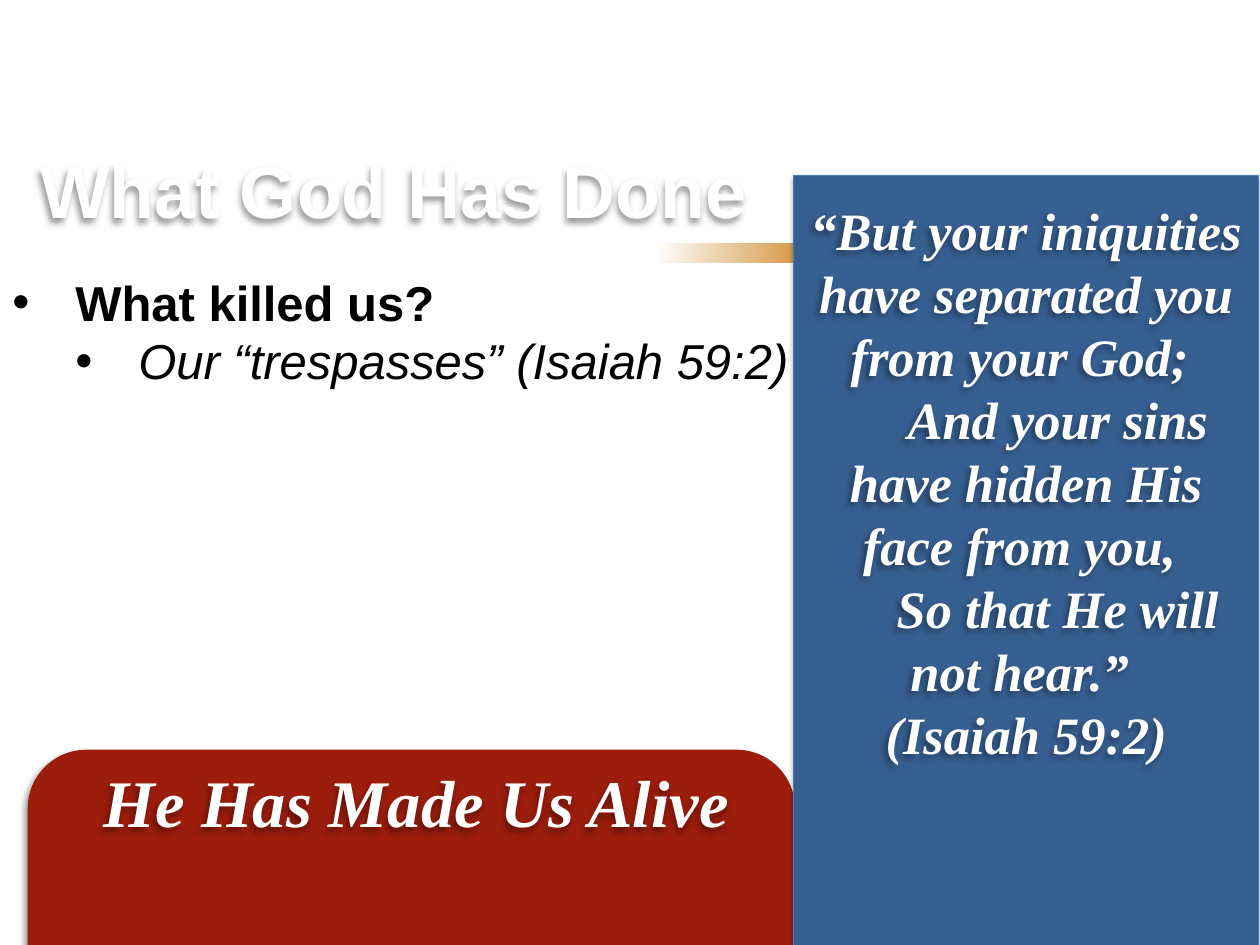
from dataclasses import dataclass
from typing import Optional

from lxml.etree import SubElement
from pptx import Presentation
from pptx.dml.color import RGBColor
from pptx.enum.shapes import MSO_SHAPE as Form
from pptx.enum.text import MSO_AUTO_SIZE as Fit, PP_ALIGN as Align
from pptx.oxml.ns import qn
from pptx.util import Inches, Pt

COLS, ROWS = 100, 75
UNIT = Inches(0.1)
WHITE, BLACK = "FFFFFF", "000000"
SANS, SERIF = "Arial", "Times New Roman"


@dataclass(frozen=True)
class Area:
    """A place on the grid, in columns and rows."""
    col: float
    row: float
    wide: float
    high: float

    def frame(self) -> list[int]:
        """Give left, top, width and height."""
        return [round(n * UNIT) for n in (self.col, self.row, self.wide, self.high)]


@dataclass(frozen=True)
class Shade:
    """A soft shadow."""
    alpha: int
    blur: float
    dist: float
    angle: int


@dataclass(frozen=True)
class Line:
    """A paragraph with its style."""
    text: str
    size: int
    font: str = SERIF
    color: str = WHITE
    bold: bool = True
    italic: bool = True
    align: Optional[Align] = Align.CENTER
    level: Optional[int] = None


LEFT = Shade(40, 4, 3, 135)
DOWN = Shade(35, 3.1, 1.8, 90)


def paint(code: str) -> RGBColor:
    """Turn a hex string into a colour."""
    return RGBColor.from_string(code)


def cast(shape, shade: Optional[Shade]) -> None:
    """Replace the default shadow by the given one."""
    shape.shadow.inherit = False
    if shade:
        glow = SubElement(shape._element.spPr.find(qn("a:effectLst")), qn("a:outerShdw"),
                          blurRad=str(Pt(shade.blur)), dist=str(Pt(shade.dist)),
                          dir=str(shade.angle * 60000), algn="ctr", rotWithShape="0")
        tint = SubElement(glow, qn("a:srgbClr"), val=BLACK)
        SubElement(tint, qn("a:alpha"), val=str(shade.alpha * 1000))


def block(host, form: Form, area: Area, fill: str, shade: Shade, edge: str = ""):
    """Draw a filled shape."""
    shape = host.add_shape(form, *area.frame())
    shape.fill.solid()
    shape.fill.fore_color.rgb = paint(fill)
    if edge:
        shape.line.color.rgb = paint(edge)
        shape.line.width = Pt(0.75)
    else:
        shape.line.fill.background()
    cast(shape, shade)


def fade(host, area: Area) -> None:
    """Draw the bar that fades in from the left."""
    bar = host.add_shape(Form.RECTANGLE, *area.frame())
    bar.fill.gradient()
    bar.fill.gradient_angle = 356
    for stop, (spot, code) in zip(bar.fill.gradient_stops, ((0.8, WHITE), (1, "CF8A2B"))):
        stop.position = spot
        stop.color.rgb = paint(code)
    bar.line.fill.background()
    cast(bar, None)


def bullet(para, level: int) -> None:
    """Give a paragraph a hanging bullet."""
    para.level = level
    props = para._p.get_or_add_pPr()
    props.set("marL", str(Inches(0.5 * (level + 1))))
    props.set("indent", str(Inches(-0.5)))
    SubElement(props, qn("a:buFont"), typeface=SANS)
    SubElement(props, qn("a:buChar"), char="•")


def write(host, area: Area, lines: list[Line], shade: Optional[Shade] = None,
          wrap: bool = True) -> None:
    """Write paragraphs in a text box."""
    box = host.add_textbox(*area.frame())
    frame = box.text_frame
    frame.word_wrap = wrap
    frame.auto_size = Fit.SHAPE_TO_FIT_TEXT
    for i, line in enumerate(lines):
        para = frame.add_paragraph() if i else frame.paragraphs[0]
        para.text = line.text
        para.alignment = line.align
        if line.level is not None:
            bullet(para, line.level)
        for run in para.runs:
            font = run.font
            font.name, font.size = line.font, Pt(line.size)
            font.bold, font.italic = line.bold, line.italic
            font.color.rgb = paint(line.color)
    cast(box, shade)


def main() -> None:
    """Build the slide."""
    deck = Presentation()
    deck.slide_width, deck.slide_height = COLS * UNIT, ROWS * UNIT
    slide = deck.slides.add_slide(deck.slide_layouts[6])
    host = slide.shapes

    title = Line("What God Has Done", 42, SANS, italic=False, align=None)
    write(host, Area(2.2, 11, 58.6, 8.1), [title], LEFT, wrap=False)
    fade(host, Area(0, 19.3, 65, 1.5))

    theme = host.add_group_shape().shapes
    block(theme, Form.ROUNDED_RECTANGLE, Area(2.2, 59.5, 60.9, 27.9), "9D1D0C", LEFT)
    write(theme, Area(5.3, 59.9, 55.5, 7.4), [Line("He Has Made Us Alive", 38)], LEFT)

    write(host, Area(0, 21.1, 65, 10.4), [
        Line("What killed us?", 28, SANS, BLACK, True, False, None, 0),
        Line("Our “trespasses” (Isaiah 59:2)", 28, SANS, BLACK, False, True, None, 1),
    ])

    verse = ("“But your iniquities have separated you from your God; ",
             "\tAnd your sins have hidden His face from you, ",
             "\tSo that He will not hear.” ",
             "(Isaiah 59:2)")
    quote = host.add_group_shape().shapes
    block(quote, Form.RECTANGLE, Area(63, 13.9, 36.9, 61.2), "376092", DOWN, "4B7EBC")
    write(quote, Area(63, 15.2, 36.9, 46.4), [Line(text, 30) for text in verse], LEFT)

    deck.save("out.pptx")


if __name__ == "__main__":
    main()
